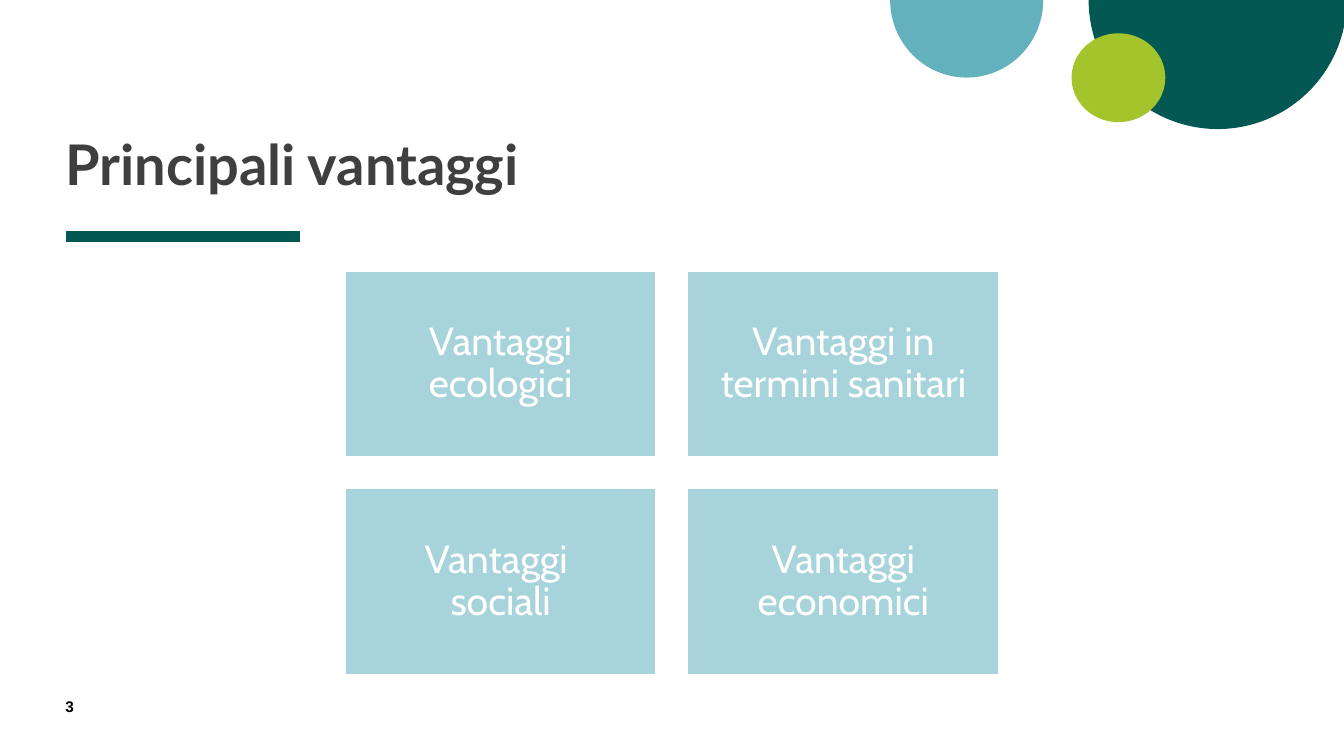
from lxml import etree
from pptx import Presentation
from pptx.dml.color import RGBColor
from pptx.enum.shapes import MSO_CONNECTOR, MSO_SHAPE
from pptx.enum.text import MSO_ANCHOR, PP_ALIGN
from pptx.oxml.ns import qn
from pptx.util import Pt

TITLE = "Principali vantaggi"
BENEFITS = [
    ["Vantaggi ecologici"],
    ["Vantaggi in termini sanitari"],
    ["Vantaggi ", "sociali"],
    ["Vantaggi economici"],
]
PAGE_NUMBER = "3"

COLORS = {
    "green": "035854",
    "blue": "64B1BE",
    "lime": "A3C42A",
    "tile": "A7D3DA",
    "white": "FFFFFF",
    "title": "3F3F3F",
    "black": "000000",
}
PIE, OVAL, RECTANGLE = MSO_SHAPE.PIE, MSO_SHAPE.OVAL, MSO_SHAPE.RECTANGLE
STRAIGHT = MSO_CONNECTOR.STRAIGHT
TOP, MIDDLE, BOTTOM = MSO_ANCHOR.TOP, MSO_ANCHOR.MIDDLE, MSO_ANCHOR.BOTTOM
LEFT, CENTER = PP_ALIGN.LEFT, PP_ALIGN.CENTER

SLIDE_WIDTH, SLIDE_HEIGHT = 960, 540
MARGIN = 46.8
HALF_TURN = 108
COLUMNS = 2
TILE_WIDTH, TILE_HEIGHT, TILE_GAP = 223.2, 133.9, 21.6
TILES_TOP = 193
TILES_LEFT = (SLIDE_WIDTH - COLUMNS * TILE_WIDTH - (COLUMNS - 1) * TILE_GAP) / 2


def rgb(name):
    return RGBColor.from_string(COLORS[name])


def add_filled(slide, kind, box, color):
    shape = slide.shapes.add_shape(kind, *map(Pt, box))
    shape.shadow.inherit = False
    shape.fill.solid()
    shape.fill.fore_color.rgb = rgb(color)
    shape.line.fill.background()
    return shape


def add_half_disc(slide, box, color):
    disc = add_filled(slide, PIE, box, color)
    disc.adjustments[0] = 0
    disc.adjustments[1] = HALF_TURN


def add_rule(slide, left, right, top, color, width):
    rule = slide.shapes.add_connector(STRAIGHT, Pt(left), Pt(top), Pt(right), Pt(top))
    rule.line.color.rgb = rgb(color)
    rule.line.width = Pt(width)
    etree.SubElement(rule._element.spPr, qn("a:effectLst"))


def write(shape, lines, font, size, color, bold=False, align=LEFT, anchor=TOP, spacing=1.0, inset=0):
    frame = shape.text_frame
    frame.word_wrap = True
    frame.vertical_anchor = anchor
    frame.margin_left = frame.margin_right = Pt(inset)
    frame.margin_top = frame.margin_bottom = Pt(inset)
    for index, line in enumerate(lines):
        paragraph = frame.add_paragraph() if index else frame.paragraphs[0]
        paragraph.alignment = align
        paragraph.line_spacing = spacing
        run = paragraph.add_run()
        run.text = line
        run.font.name = font
        run.font.size = Pt(size)
        run.font.bold = bold
        run.font.color.rgb = rgb(color)


def add_text(slide, box, lines, *style, **layout):
    write(slide.shapes.add_textbox(*map(Pt, box)), lines, *style, **layout)


def add_tile(slide, index, lines):
    row, column = divmod(index, COLUMNS)
    left = TILES_LEFT + column * (TILE_WIDTH + TILE_GAP)
    top = TILES_TOP + row * (TILE_HEIGHT + TILE_GAP)
    tile = add_filled(slide, RECTANGLE, (left, top, TILE_WIDTH, TILE_HEIGHT), "tile")
    tile.line.color.rgb = rgb("white")
    tile.line.width = Pt(2)
    write(tile, lines, "Cabin", 28, "white", align=CENTER, anchor=MIDDLE, spacing=0.9, inset=8.4)


def main():
    """Build the slide of main benefits and save it."""
    presentation = Presentation()
    presentation.slide_width, presentation.slide_height = Pt(SLIDE_WIDTH), Pt(SLIDE_HEIGHT)
    slide = presentation.slides.add_slide(presentation.slide_layouts[6])

    add_half_disc(slide, (777.6, -92.2, 184.4, 184.4), "green")
    add_rule(slide, MARGIN, 214.6, 169.2, "green", 8)
    add_half_disc(slide, (635.8, -55.4, 109.4, 110.8), "blue")
    add_filled(slide, OVAL, (765.4, 23.8, 67, 63.4), "lime")

    add_text(slide, (MARGIN, 15, 534, 125.4), [TITLE], "Lato", 40, "title",
             bold=True, anchor=BOTTOM, spacing=0.8)
    for index, lines in enumerate(BENEFITS):
        add_tile(slide, index, lines)
    add_text(slide, (MARGIN, 498.2, 41, 19.4), [PAGE_NUMBER], "Arial", 11, "black", bold=True)

    presentation.save("out.pptx")


if __name__ == "__main__":
    main()
